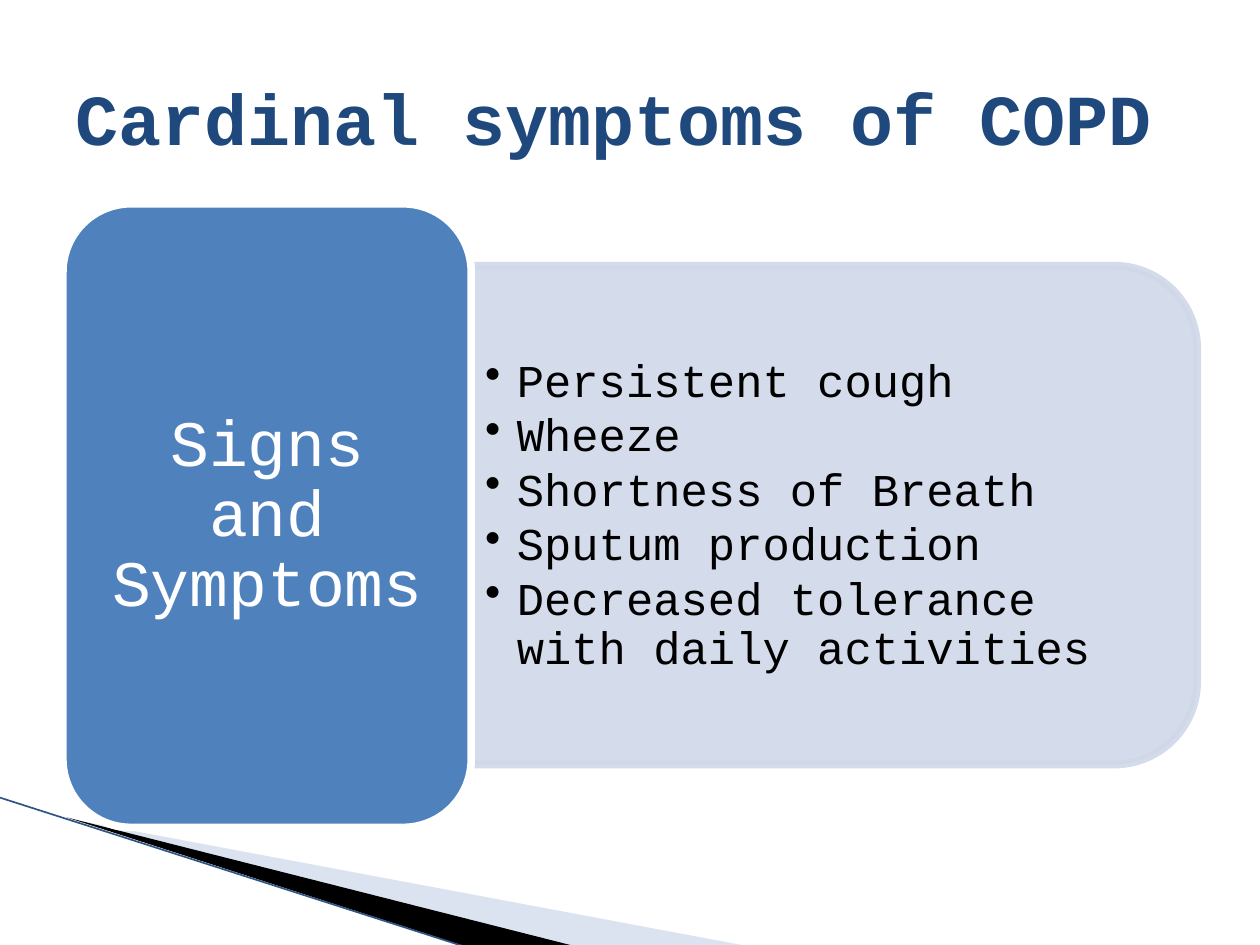
"""Build the slide on the cardinal symptoms of COPD."""
from dataclasses import dataclass

import lxml.etree
import pptx
import pptx.dml.color
import pptx.enum.shapes
import pptx.enum.text
import pptx.oxml
import pptx.oxml.ns
import pptx.util

Cm = pptx.util.Cm
Pt = pptx.util.Pt
Shapes = pptx.enum.shapes.MSO_SHAPE
Align = pptx.enum.text.PP_ALIGN


@dataclass(frozen=True)
class Theme:
    font: str = "Courier New"
    title: str = "1F497D"
    text: str = "000000"
    light: str = "FFFFFF"
    panel: str = "D0D8E8"
    accent: str = "4F81BD"
    pale_wedge: str = "A7B9DB"
    dark_wedge: str = "000000"
    edge: str = "2F5585"
    title_size: float = 41
    label_size: float = 37
    list_size: float = 26
    border: float = 4.33


@dataclass(frozen=True)
class Box:
    left: float
    top: float
    width: float
    height: float

    def lengths(self) -> tuple:
        return tuple(Cm(n) for n in (self.left, self.top, self.width, self.height))


@dataclass(frozen=True)
class Wedge:
    points: tuple
    color: str
    opacity: int = 100


@dataclass(frozen=True)
class Block:
    box: Box
    lines: tuple
    size: float
    color: str
    bold: bool = False
    align: Align = Align.LEFT
    spacing: float = 1.0
    after: float = 0
    inset: float = 0.25
    bulleted: bool = False


@dataclass(frozen=True)
class Panel:
    box: Box
    kind: Shapes
    fill: str
    line: str
    opacity: int = 100
    rotation: float = 0


THEME = Theme()
SYMPTOMS = (
    "Persistent cough",
    "Wheeze",
    "Shortness of Breath",
    "Sputum production",
    "Decreased tolerance with daily activities",
)
WEDGES = (
    Wedge(((1.4, 16.51), (15.11, 19.08), (11.58, 19.08)), THEME.pale_wedge, 40),
    Wedge(((1.35, 16.48), (11.61, 19.08), (9.45, 19.1)), THEME.dark_wedge),
)
PANELS = (
    Panel(Box(11.79, 3.07, 10.06, 14.63), Shapes.ROUND_2_SAME_RECTANGLE,
          THEME.panel, THEME.panel, 90, 90),
    Panel(Box(1.27, 4.11, 8.23, 12.57), Shapes.ROUNDED_RECTANGLE,
          THEME.accent, THEME.light),
)
BLOCKS = (
    Block(Box(9.5, 5.87, 14.14, 9.07), SYMPTOMS, THEME.list_size, THEME.text,
          spacing=0.9, after=3, inset=0.28, bulleted=True),
    Block(Box(1.68, 4.52, 7.42, 11.76), ("Signs and Symptoms",), THEME.label_size,
          THEME.light, align=Align.CENTER, spacing=0.9, inset=0.38),
    Block(Box(1.27, 0.76, 22.86, 3.18), ("Cardinal symptoms of COPD",),
          THEME.title_size, THEME.title, bold=True),
)


def rgb(color: str) -> pptx.dml.color.RGBColor:
    return pptx.dml.color.RGBColor.from_string(color)


def paint(fill, color: str, opacity: int, holder) -> None:
    fill.solid()
    fill.fore_color.rgb = rgb(color)
    if opacity < 100:
        solid = holder.find(pptx.oxml.ns.qn("a:solidFill"))
        alpha = lxml.etree.SubElement(solid[0], pptx.oxml.ns.qn("a:alpha"))
        alpha.set("val", str(opacity * 1000))


def draw_wedge(slide, wedge: Wedge) -> None:
    start, *rest = [(Cm(x), Cm(y)) for x, y in wedge.points]
    builder = slide.shapes.build_freeform(*start)
    builder.add_line_segments(rest, close=True)
    sliver = builder.convert_to_shape()
    sliver.shadow.inherit = False
    paint(sliver.fill, wedge.color, wedge.opacity, sliver._element.spPr)
    sliver.line.fill.background()


def draw_edge(slide) -> None:
    edge = slide.shapes.add_connector(
        pptx.enum.shapes.MSO_CONNECTOR.STRAIGHT, Cm(0), Cm(16.08), Cm(9.42), Cm(19.1))
    edge.line.color.rgb = rgb(THEME.edge)
    edge.line.width = Pt(0.95)
    lxml.etree.SubElement(edge._element.spPr, pptx.oxml.ns.qn("a:effectLst"))


def draw_panel(slide, panel: Panel) -> None:
    card = slide.shapes.add_shape(panel.kind, *panel.box.lengths())
    card.shadow.inherit = False
    card.rotation = panel.rotation
    paint(card.fill, panel.fill, panel.opacity, card._element.spPr)
    card.line.width = Pt(THEME.border)
    paint(card.line.fill, panel.line, panel.opacity,
          card._element.spPr.find(pptx.oxml.ns.qn("a:ln")))


def add_bullet(paragraph) -> None:
    properties = paragraph._p.get_or_add_pPr()
    properties.set("marL", str(Cm(0.64)))
    properties.set("indent", str(-Cm(0.64)))
    bullet = lxml.etree.SubElement(properties, pptx.oxml.ns.qn("a:buChar"))
    bullet.set("char", "•")


def draw_block(slide, block: Block) -> None:
    frame = slide.shapes.add_textbox(*block.box.lengths()).text_frame
    frame.word_wrap = True
    frame.vertical_anchor = pptx.enum.text.MSO_ANCHOR.MIDDLE
    frame.margin_left = frame.margin_right = Cm(block.inset)
    frame.margin_top = frame.margin_bottom = Cm(block.inset / 2)
    frame.text = "\n".join(block.lines)
    for paragraph in frame.paragraphs:
        if block.bulleted:
            add_bullet(paragraph)
        paragraph.alignment = block.align
        paragraph.line_spacing = block.spacing
        paragraph.space_after = Pt(block.after)
        for run in paragraph.runs:
            run.font.name = THEME.font
            run.font.size = Pt(block.size)
            run.font.bold = block.bold
            run.font.color.rgb = rgb(block.color)


def main() -> None:
    deck = pptx.Presentation()
    deck.slide_width, deck.slide_height = Cm(25.4), Cm(19.05)
    slide = deck.slides.add_slide(deck.slide_layouts[6])
    for wedge in WEDGES:
        draw_wedge(slide, wedge)
    draw_edge(slide)
    for panel in PANELS:
        draw_panel(slide, panel)
    for block in BLOCKS:
        draw_block(slide, block)
    deck.save("out.pptx")


if __name__ == "__main__":
    main()
